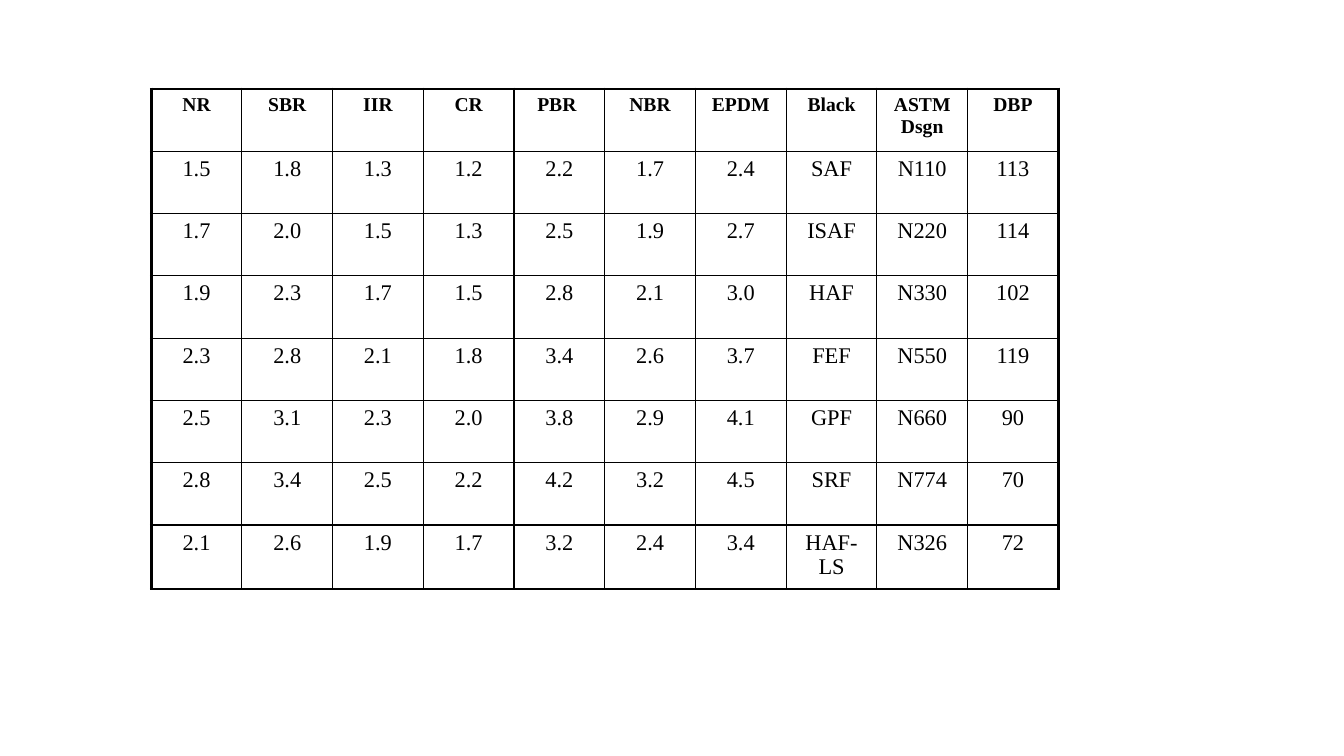
from lxml.etree import SubElement
from pptx import Presentation
from pptx.dml.color import RGBColor
from pptx.enum.text import PP_ALIGN
from pptx.oxml.ns import qn
from pptx.util import Cm, Pt

COLORS = {"ink": "000000"}
FONT = "Times New Roman"
THIN, THICK = 1, 2.25
ROW_HEIGHT, LAST_ROW_HEIGHT = 1.57, 1.61

HEADERS = ["NR", "SBR", "IIR", "CR", "PBR ", "NBR", "EPDM", "Black", "ASTM Dsgn", "DBP"]
GRADES = [
    ["1.5", "1.8", "1.3", "1.2", "2.2", "1.7", "2.4", "SAF", "N110", "113"],
    ["1.7", "2.0", "1.5", "1.3", "2.5", "1.9", "2.7", "ISAF", "N220", "114"],
    ["1.9", "2.3", "1.7", "1.5", "2.8", "2.1", "3.0", "HAF", "N330", "102"],
    ["2.3", "2.8", "2.1", "1.8", "3.4", "2.6", "3.7", "FEF", "N550", "119"],
    ["2.5", "3.1", "2.3", "2.0", "3.8", "2.9", "4.1", "GPF", "N660", "90"],
    ["2.8", "3.4", "2.5", "2.2", "4.2", "3.2", "4.5", "SRF", "N774", "70"],
    ["2.1", "2.6", "1.9", "1.7", "3.2", "2.4", "3.4", "HAF-LS", "N326", "72"],
]


def set_border(cell, side, width):
    line = SubElement(cell._tc.get_or_add_tcPr(), qn(f"a:ln{side}"), w=str(Pt(width)))
    fill = SubElement(line, qn("a:solidFill"))
    SubElement(fill, qn("a:srgbClr"), val=COLORS["ink"])


def set_space_before(paragraph, percent):
    space = SubElement(paragraph._p.get_or_add_pPr(), qn("a:spcBef"))
    SubElement(space, qn("a:spcPct"), val=str(percent * 1000))


def write_cell(cell, text, size, bold):
    cell.text_frame.text = text
    paragraph = cell.text_frame.paragraphs[0]
    paragraph.alignment = PP_ALIGN.CENTER
    set_space_before(paragraph, 20)
    font = paragraph.runs[0].font
    font.name = FONT
    font.size = Pt(size)
    font.bold = bold
    font.color.rgb = RGBColor.from_string(COLORS["ink"])


def add_grade_table(slide, rows):
    last_row, last_column = len(rows) - 1, len(rows[0]) - 1
    height = ROW_HEIGHT * last_row + LAST_ROW_HEIGHT
    table = slide.shapes.add_table(
        len(rows), len(rows[0]), Cm(3.81), Cm(2.24), Cm(22.86), Cm(height)
    ).table
    table.first_row = False
    table.horz_banding = False
    for row_index, values in enumerate(rows):
        is_last = row_index == last_row
        table.rows[row_index].height = Cm(LAST_ROW_HEIGHT if is_last else ROW_HEIGHT)
        is_header = row_index == 0
        for column_index, text in enumerate(values):
            cell = table.cell(row_index, column_index)
            write_cell(cell, text, 14 if is_header else 16, is_header)
            outer_sides = {
                "L": column_index == 0,
                "R": column_index == last_column,
                "T": is_header,
                "B": is_last,
            }
            for side, is_outer in outer_sides.items():
                set_border(cell, side, THICK if is_outer else THIN)
            cell.fill.background()


def main():
    presentation = Presentation()
    presentation.slide_width = Cm(33.87)
    presentation.slide_height = Cm(19.05)
    slide = presentation.slides.add_slide(presentation.slide_layouts[6])
    add_grade_table(slide, [HEADERS, *GRADES])
    presentation.save("out.pptx")


if __name__ == "__main__":
    main()
